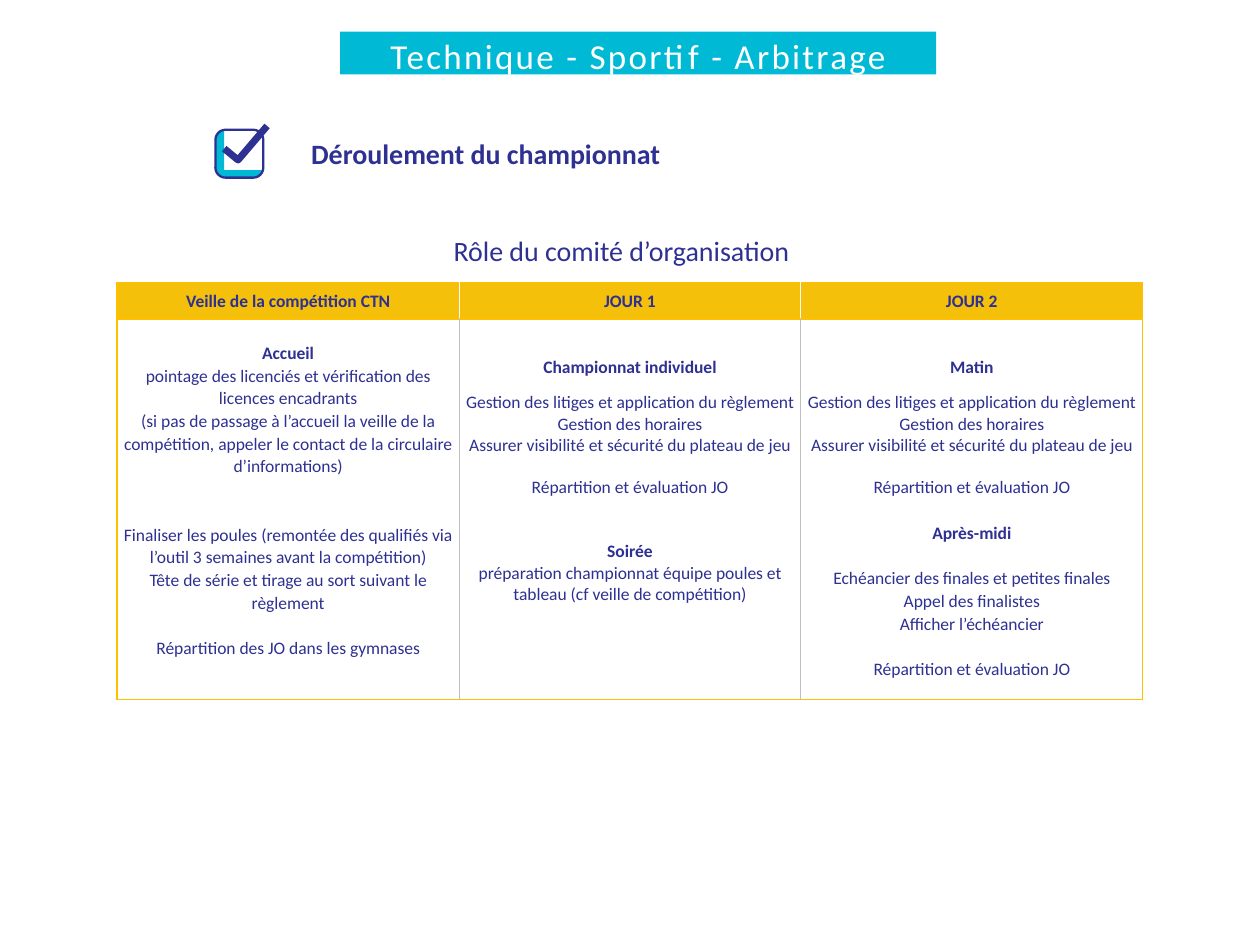
from lxml import etree
from pptx import Presentation
from pptx import util as u
from pptx.dml.color import RGBColor
from pptx.enum import shapes, text
from pptx.oxml.ns import qn

NAVY = RGBColor(0x2E, 0x30, 0x92)
CYAN = RGBColor(0x00, 0xBA, 0xD5)
WHITE = RGBColor(0xFF, 0xFF, 0xFF)
AMBER = RGBColor(0xFF, 0xC0, 0x00)
GOLD = RGBColor(0xF4, 0xC0, 0x09)
GREY = RGBColor(0xBF, 0xBF, 0xBF)
FONT = "Calibri"

LINE = 12.2
WIDE = 1.07
TALL = LINE * WIDE

HEADS = ["Veille de la compétition CTN", "JOUR 1", "JOUR 2"]

DUTIES = [
    ("Gestion des litiges et application du règlement", False, 1, 0, 0),
    ("Gestion des horaires", False, 1, 0, 0),
    ("Assurer visibilité et sécurité du plateau de jeu", False, 1, 0, 0),
    ("Répartition et évaluation JO", False, 1, LINE, 0),
]
EVE = [
    ("Accueil", True, WIDE, 0, 0),
    ("pointage des licenciés et vérification des licences encadrants", False, WIDE, 0, 0),
    ("(si pas de passage à l’accueil la veille de la compétition, appeler le contact "
     "de la circulaire d’informations)", False, WIDE, 0, 0),
    ("Finaliser les poules (remontée des qualifiés via l’outil 3 semaines avant la "
     "compétition)", False, WIDE, 2 * TALL, 0),
    ("Tête de série et tirage au sort suivant le règlement", False, WIDE, 0, 0),
    ("Répartition des JO dans les gymnases", False, WIDE, TALL, 0),
]
DAY1 = [
    ("Championnat individuel", True, WIDE, 0, 8),
    *DUTIES,
    ("Soirée", True, 1, 2 * LINE, 0),
    ("préparation championnat équipe poules et tableau (cf veille de compétition)",
     False, 1, 0, 0),
]
DAY2 = [
    ("Matin", True, WIDE, 0, 8),
    *DUTIES,
    ("Après-midi", True, WIDE, TALL, 0),
    ("Echéancier des finales et petites finales", False, WIDE, TALL, 0),
    ("Appel des finalistes", False, WIDE, 0, 0),
    ("Afficher l’échéancier", False, WIDE, 0, 0),
    ("Répartition et évaluation JO", False, WIDE, TALL, 0),
]
TOPS = [TALL, TALL + 8, TALL + 8]


def style(para, size, color, bold=False):
    """Format every run of a paragraph."""
    for run in para.runs:
        font = run.font
        font.name, font.size, font.bold = FONT, u.Pt(size), bold
        font.color.rgb = color


def inset(frame, left, top):
    """Set the left and top margins and clear the others."""
    frame.margin_left, frame.margin_top = u.Inches(left), u.Inches(top)
    frame.margin_right = frame.margin_bottom = 0
    frame.word_wrap = True


def banner(slide, left, top, width, height):
    """Turn the title placeholder into the coloured banner."""
    title = slide.shapes.title
    title.left, title.top = u.Inches(left), u.Inches(top)
    title.width, title.height = u.Inches(width), u.Inches(height)
    title.fill.solid()
    title.fill.fore_color.rgb = CYAN
    frame = title.text_frame
    inset(frame, 0, 0.02)
    frame.auto_size = text.MSO_AUTO_SIZE.NONE
    frame.vertical_anchor = text.MSO_ANCHOR.TOP
    frame.text = "Technique - Sportif - Arbitrage"
    para = frame.paragraphs[0]
    para.alignment = text.PP_ALIGN.CENTER
    para.line_spacing = 1.0
    style(para, 20, WHITE)
    para.runs[0].font._element.set("spc", "130")


def label(slide, words, left, top, bold=False):
    """Add a heading line."""
    box = slide.shapes.add_textbox(
        u.Inches(left), u.Inches(top), u.Inches(2.81), u.Inches(0.28))
    inset(box.text_frame, 0.01, 0.02)
    box.text_frame.text = words
    style(box.text_frame.paragraphs[0], 16, NAVY, bold)


def trace(group, points, left, top, closed):
    """Draw an outline from points in hundredths of an inch."""
    pen = group.shapes.build_freeform(*points[0], scale=u.Inches(0.01))
    pen.add_line_segments(points[1:], close=closed)
    shape = pen.convert_to_shape(u.Inches(left), u.Inches(top))
    shape.shadow.inherit = False
    return shape


def stroke(shape, width):
    """Leave a shape unfilled with a navy line."""
    shape.fill.background()
    shape.line.color.rgb = NAVY
    shape.line.width = u.Pt(width)


def tick(slide, left, top, size):
    """Draw the ticked checkbox."""
    group = slide.shapes.add_group_shape()
    edge = [(7, 1), (5, 1), (3, 2), (1, 4), (0, 7), (0, 33), (1, 35), (2, 36),
            (3, 37), (6, 38), (33, 38), (37, 35), (37, 32), (7, 32)]
    shade = trace(group, edge, left, top, True)
    shade.fill.solid()
    shade.fill.fore_color.rgb = CYAN
    shade.line.fill.background()
    frame = group.shapes.add_shape(
        shapes.MSO_SHAPE.ROUNDED_RECTANGLE, u.Inches(left), u.Inches(top),
        u.Inches(size), u.Inches(size))
    frame.adjustments[0] = 0.21
    frame.shadow.inherit = False
    stroke(frame, 1.3)
    stroke(trace(group, [(7, 15), (18, 24), (41, -3)], left, top, False), 4)


def border(cell, sides):
    """Set the left, right, top and bottom cell lines."""
    props = cell._tc.get_or_add_tcPr()
    for spot, (tag, (color, width)) in enumerate(zip(("lnL", "lnR", "lnT", "lnB"), sides)):
        line = etree.Element(qn(f"a:{tag}"), w=str(u.Pt(width)))
        fill = etree.SubElement(line, qn("a:solidFill"))
        etree.SubElement(fill, qn("a:srgbClr"), val=str(color))
        props.insert(spot, line)


def write(cell, items, top=0):
    """Fill a cell with centred paragraphs."""
    cell.margin_left = cell.margin_right = u.Inches(0.04)
    cell.margin_top, cell.margin_bottom = u.Pt(top), 0
    frame = cell.text_frame
    frame.text = "\n".join(item[0] for item in items)
    for para, (_, bold, gap, above, below) in zip(frame.paragraphs, items):
        para.alignment = text.PP_ALIGN.CENTER
        para.line_spacing = gap
        para.space_before, para.space_after = u.Pt(above), u.Pt(below)
        style(para, 10, NAVY, bold)


def agenda(slide, left, top, width, rows):
    """Add the three-column table of duties."""
    grid = slide.shapes.add_table(
        2, 3, u.Inches(left), u.Inches(top), u.Inches(width), u.Inches(sum(rows))).table
    grid.first_row = grid.horz_banding = False
    for row, height in zip(grid.rows, rows):
        row.height = u.Inches(height)
    outer = (AMBER, 1)
    for col, (head, items, pad) in enumerate(zip(HEADS, (EVE, DAY1, DAY2), TOPS)):
        grid.columns[col].width = u.Inches(width / 3)
        upper, lower = grid.cell(0, col), grid.cell(1, col)
        write(upper, [(head, True, WIDE, 0, 0)])
        upper.vertical_anchor = text.MSO_ANCHOR.MIDDLE
        upper.fill.solid()
        upper.fill.fore_color.rgb = GOLD
        write(lower, items, pad)
        lower.fill.background()
        for cell, color in ((upper, WHITE), (lower, GREY)):
            inner = (color, 0.5)
            border(cell, (outer if col == 0 else inner,
                          outer if col == 2 else inner, outer, outer))


def main():
    """Build and save the slide."""
    deck = Presentation()
    deck.slide_width, deck.slide_height = u.Inches(10), u.Inches(7.5)
    slide = deck.slides.add_slide(deck.slide_layouts[5])
    tick(slide, 1.71, 1.03, 0.38)
    label(slide, "Déroulement du championnat", 2.46, 1.06, True)
    banner(slide, 2.7, 0.25, 4.73, 0.34)
    agenda(slide, 0.93, 2.24, 8.14, (0.29, 3.02))
    label(slide, "Rôle du comité d’organisation", 3.59, 1.83)
    deck.save("out.pptx")


if __name__ == "__main__":
    main()
